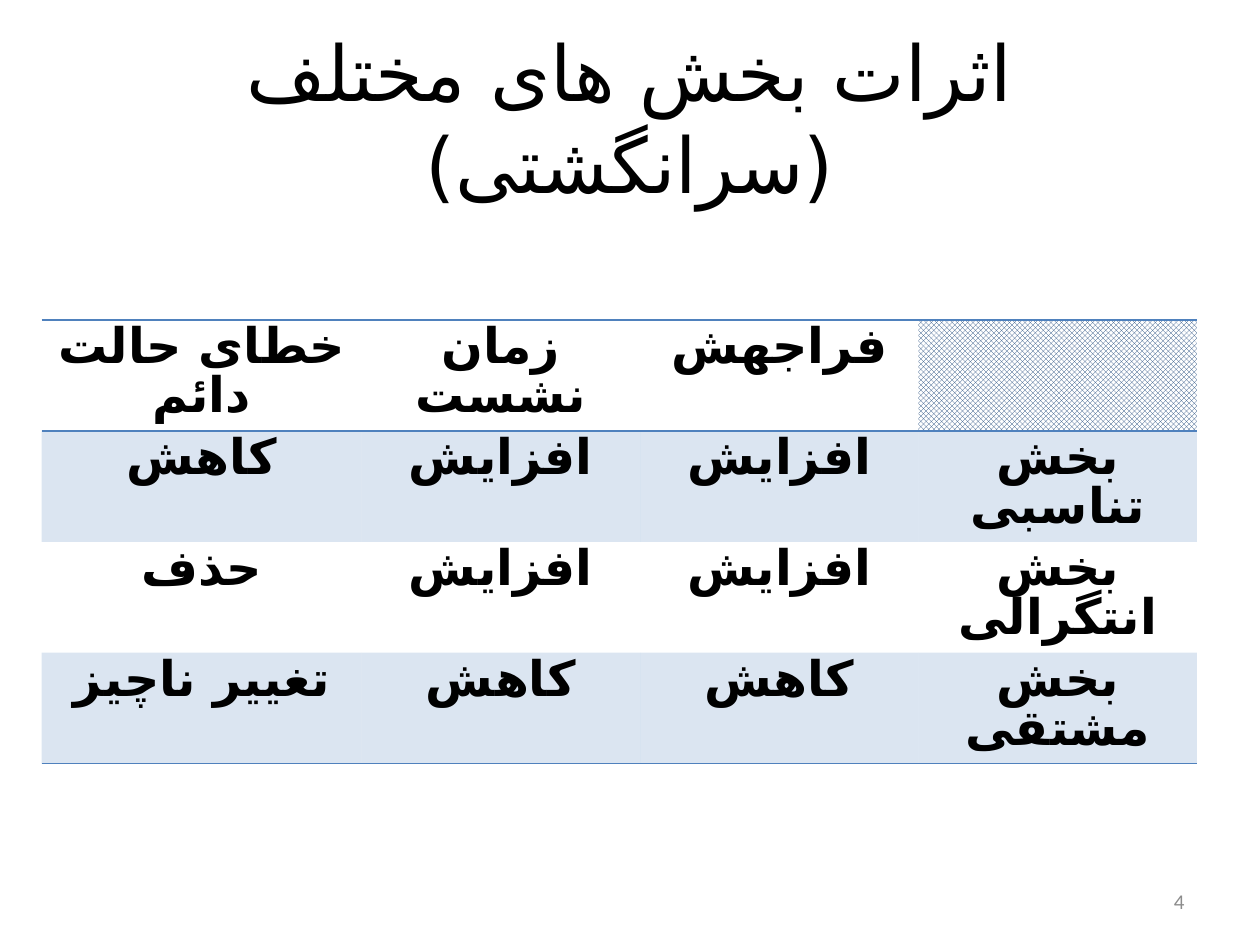
from lxml import etree
from pptx import Presentation
from pptx.dml.color import RGBColor
from pptx.enum.dml import MSO_PATTERN
from pptx.enum.text import MSO_ANCHOR, PP_ALIGN
from pptx.oxml.ns import qn
from pptx.util import Inches, Pt

TRELLIS = MSO_PATTERN.TRELLIS
MIDDLE = MSO_ANCHOR.MIDDLE
CENTER, RIGHT = PP_ALIGN.CENTER, PP_ALIGN.RIGHT
FONT, PERSIAN_FONT = "Calibri", "DejaVu Sans"
NO_STYLE_NO_GRID = "{2D5ABB26-0587-4C30-8999-92F81FD0307C}"
COLORS = {"text": "000000", "accent": "4F81BD", "hatch": "1F497D",
          "paper": "FFFFFF", "number": "8C8C8C"}

TITLE = "اثرات بخش های مختلف (سرانگشتی)"
PAGE_NUMBER = "4"
EFFECTS = [
    ["خطای حالت دائم", "زمان نشست", "فراجهش", ""],
    ["کاهش", "افزایش", "افزایش", "بخش تناسبی"],
    ["حذف", "افزایش", "افزایش", "بخش انتگرالی"],
    ["تغییر ناچیز", "کاهش", "کاهش", "بخش مشتقی"],
]
COLUMN_WIDTHS = [2.54, 2.21, 2.21, 2.21]
ROW_HEIGHT = 0.88


def rgb(name):
    return RGBColor.from_string(COLORS[name])


def write(frame, text, size, color, align, bold=False, rtl=False):
    frame.text = text
    paragraph = frame.paragraphs[0]
    paragraph.alignment = align
    if rtl:
        paragraph._p.get_or_add_pPr().set("rtl", "1")
    for run in paragraph.runs:
        run.font.name = FONT
        run.font.size = Pt(size)
        run.font.bold = bold
        run.font.color.rgb = rgb(color)
        if rtl:
            run._r.rPr.set("lang", "fa-IR")
            etree.SubElement(run._r.rPr, qn("a:cs")).set("typeface", PERSIAN_FONT)
    return paragraph


def add_rules(cell, edges):
    """Draw 1 pt accent borders; edges are tags in schema order, lnT then lnB."""
    properties = cell._tc.get_or_add_tcPr()
    for position, edge in enumerate(edges):
        line = etree.Element(qn(f"a:{edge}"), w=str(Pt(1)), cmpd="sng")
        fill = etree.SubElement(line, qn("a:solidFill"))
        etree.SubElement(fill, qn("a:srgbClr"), val=COLORS["accent"])
        etree.SubElement(line, qn("a:prstDash"), val="solid")
        properties.insert(position, line)


def fill_cell(cell, banded, hatched):
    if hatched:
        cell.fill.patterned()
        cell.fill.pattern = TRELLIS
        cell.fill.fore_color.rgb = rgb("hatch")
        cell.fill.back_color.rgb = rgb("paper")
    elif banded:
        cell.fill.solid()
        cell.fill.fore_color.rgb = rgb("accent")
        color = cell._tc.tcPr.find(".//" + qn("a:srgbClr"))
        etree.SubElement(color, qn("a:alpha"), val="20000")
    else:
        cell.fill.background()


def add_effects_table(slide):
    rows, columns = len(EFFECTS), len(COLUMN_WIDTHS)
    frame = slide.shapes.add_table(
        rows, columns, Inches(0.33), Inches(2.54),
        Inches(sum(COLUMN_WIDTHS)), Inches(ROW_HEIGHT * rows))
    table = frame.table
    table._tbl.tblPr.find(qn("a:tableStyleId")).text = NO_STYLE_NO_GRID
    for column, width in zip(table.columns, COLUMN_WIDTHS):
        column.width = Inches(width)
    for r, effects in enumerate(EFFECTS):
        edges = {0: ["lnT", "lnB"], rows - 1: ["lnB"]}.get(r, [])
        for c, effect in enumerate(effects):
            cell = table.cell(r, c)
            paragraph = write(cell.text_frame, effect, 28, "text", CENTER,
                              bold=True, rtl=True)
            paragraph.line_spacing = Pt(28)
            fill_cell(cell, banded=r % 2 == 1, hatched=not effect)
            add_rules(cell, edges)


def main():
    deck = Presentation()
    deck.slide_width, deck.slide_height = Inches(10), Inches(7.5)
    slide = deck.slides.add_slide(deck.slide_layouts[5])

    title = slide.shapes.title
    title.left, title.top = Inches(0.5), Inches(0.3)
    title.width, title.height = Inches(9), Inches(1.25)
    title.text_frame.vertical_anchor = MIDDLE
    write(title.text_frame, TITLE, 44, "text", CENTER, rtl=True)

    add_effects_table(slide)

    number = slide.shapes.add_textbox(
        Inches(7.17), Inches(6.95), Inches(2.33), Inches(0.4)).text_frame
    number.word_wrap = True
    number.vertical_anchor = MIDDLE
    write(number, PAGE_NUMBER, 12, "number", RIGHT)

    deck.save("out.pptx")


if __name__ == "__main__":
    main()
